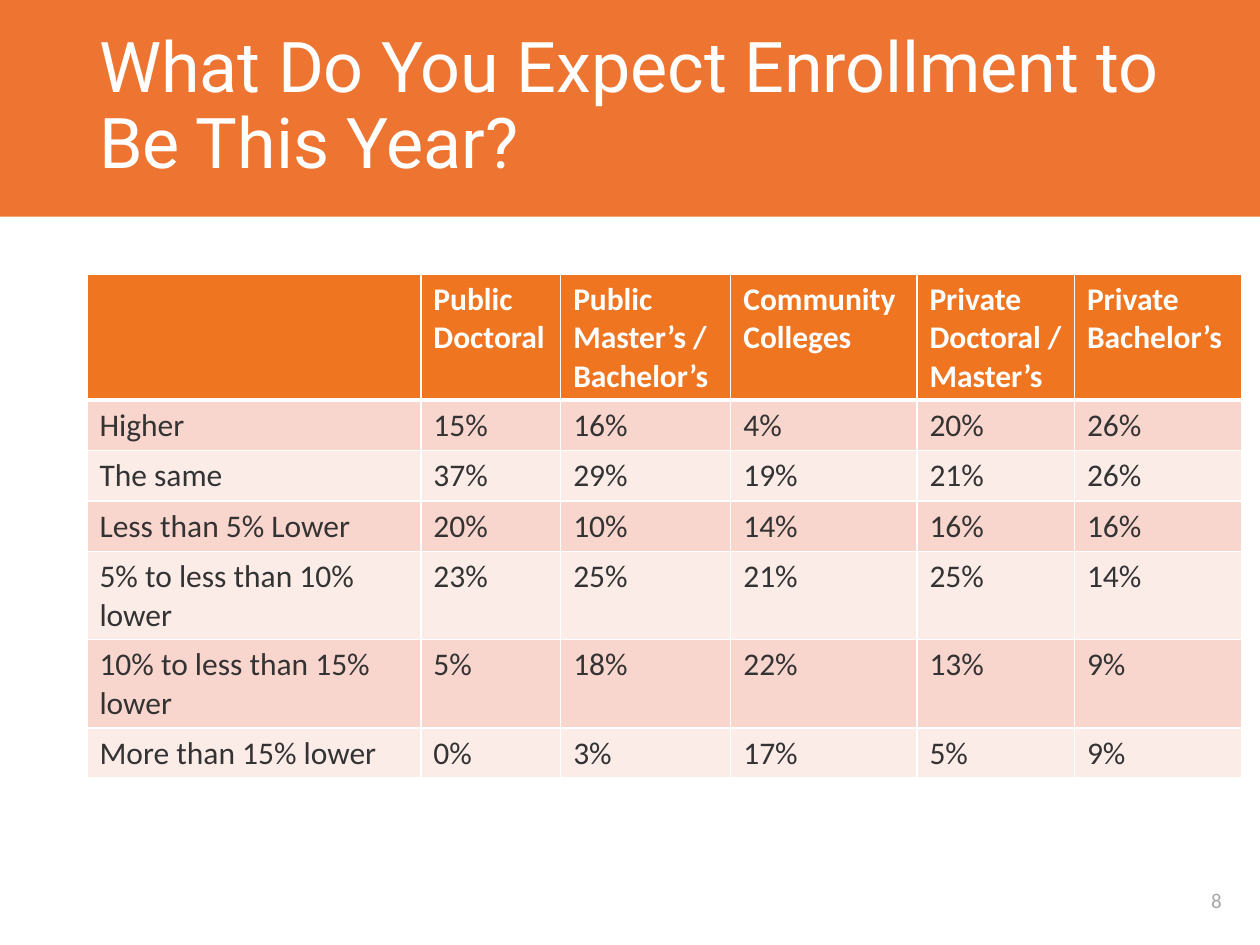
from lxml.etree import SubElement
from pptx import Presentation
from pptx.dml.color import RGBColor
from pptx.enum.shapes import MSO_SHAPE
from pptx.enum.text import MSO_ANCHOR, PP_ALIGN
from pptx.oxml import parse_xml
from pptx.oxml.ns import nsdecls
from pptx.util import Pt

WHITE = RGBColor(0xFF, 0xFF, 0xFF)
BAND = RGBColor(0xEE, 0x75, 0x31)
HEAD = RGBColor(0xEF, 0x75, 0x21)
ROSE = RGBColor(0xF9, 0xD6, 0xCD)
PALE = RGBColor(0xFC, 0xEC, 0xE8)
INK = RGBColor(0x33, 0x33, 0x33)
GREY = RGBColor(0xA6, 0xA6, 0xA6)

COLS = [190.8, 79.9, 97.2, 106.4, 90, 95.8]
ROWS = [
    ["", "Public Doctoral", "Public Master’s / Bachelor’s", "Community Colleges",
     "Private Doctoral / Master’s", "Private Bachelor’s"],
    ["Higher", "15%", "16%", "4%", "20%", "26%"],
    ["The same", "37%", "29%", "19%", "21%", "26%"],
    ["Less than 5% Lower", "20%", "10%", "14%", "16%", "16%"],
    ["5% to less than 10% lower", "23%", "25%", "21%", "25%", "14%"],
    ["10% to less than 15% lower", "5%", "18%", "22%", "13%", "9%"],
    ["More than 15% lower", "0%", "3%", "17%", "5%", "9%"],
]


def write(frame, text, font="Calibri", size=18, color=INK, bold=False,
          align=PP_ALIGN.LEFT, space=None):
    para = frame.paragraphs[0]
    para.text = text
    para.alignment = align
    para.line_spacing = space
    style = para.font
    style.name, style.size, style.bold = font, Pt(size), bold
    style.color.rgb = color


def edge(cell, base):
    """Draw white cell borders, with the given width at the bottom."""
    props = cell._tc.get_or_add_tcPr()
    widths = {"lnL": 1, "lnR": 1, "lnT": 1, "lnB": base}
    for spot, (tag, width) in enumerate(widths.items()):
        line = parse_xml(f'<a:{tag} {nsdecls("a")} w="{Pt(width)}"/>')
        fill = SubElement(line, f"{{{line.nsmap['a']}}}solidFill")
        SubElement(fill, f"{{{line.nsmap['a']}}}srgbClr", val=str(WHITE))
        props.insert(spot, line)


class Deck:
    def __init__(self, wide, high):
        self.show = Presentation()
        self.show.slide_width, self.show.slide_height = Pt(wide), Pt(high)
        self.slide = self.show.slides.add_slide(self.show.slide_layouts[6])

    def rect(self, box, color):
        shape = self.slide.shapes.add_shape(MSO_SHAPE.RECTANGLE, *map(Pt, box))
        shape.shadow.inherit = False
        shape.fill.solid()
        shape.fill.fore_color.rgb = color
        shape.line.fill.background()

    def text(self, box, text, **form):
        frame = self.slide.shapes.add_textbox(*map(Pt, box)).text_frame
        frame.word_wrap = True
        frame.vertical_anchor = MSO_ANCHOR.MIDDLE
        write(frame, text, **form)

    def table(self, left, top, cols, rows, first, rest):
        high = first + rest * (len(rows) - 1)
        grid = self.slide.shapes.add_table(
            len(rows), len(cols), Pt(left), Pt(top), Pt(sum(cols)), Pt(high)).table
        for col, wide in zip(grid.columns, cols):
            col.width = Pt(wide)
        for r, row in enumerate(rows):
            head = r == 0
            grid.rows[r].height = Pt(first if head else rest)
            for c, text in enumerate(row):
                cell = grid.cell(r, c)
                cell.fill.solid()
                cell.fill.fore_color.rgb = HEAD if head else ROSE if r % 2 else PALE
                edge(cell, 3 if head else 1)
                write(cell.text_frame, text, color=WHITE if head else INK, bold=head)


def main():
    deck = Deck(720, 540)
    # Title band
    deck.rect((-0.7, 0, 721.4, 123.8), BAND)
    deck.text((49.7, 0, 620.6, 123.1), "What Do You Expect Enrollment to Be This Year?",
              font="Roboto", size=40, color=WHITE, space=0.9)
    # Enrollment table
    deck.table(49.7, 156.5, COLS, ROWS, first=68.4, rest=27.4)
    # Slide number
    deck.text((670.3, 500.4, 49.7, 28.1), "8", size=12, color=GREY,
              align=PP_ALIGN.CENTER)
    deck.show.save("out.pptx")


if __name__ == "__main__":
    main()
